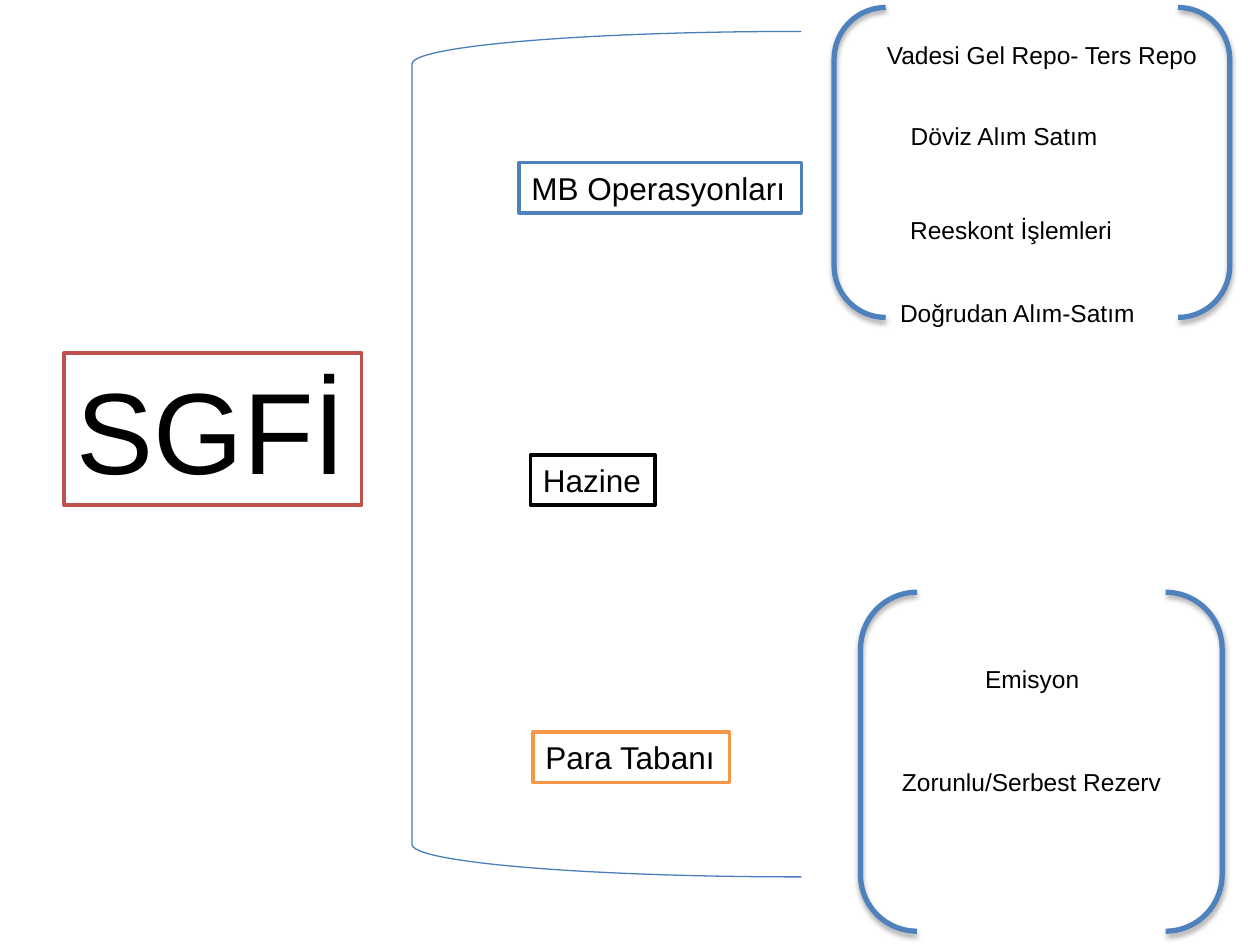
import pptx
import pptx.util
import pptx.oxml
import pptx.dml.color
from dataclasses import dataclass
from pptx.enum.shapes import MSO_SHAPE
from pptx.enum.text import MSO_ANCHOR, MSO_AUTO_SIZE, PP_ALIGN


@dataclass(frozen=True)
class Theme:
    font: str = "Arial"
    ink: str = "000000"
    paper: str = "FFFFFF"
    blue: str = "4F81BD"
    stem: str = "4B7EBC"
    red: str = "C0504D"
    orange: str = "F79646"
    root_size: int = 66
    branch_size: int = 18
    leaf_size: int = 14


THEME = Theme()
WIDTH, HEIGHT = pptx.util.Inches(10), pptx.util.Inches(7.5)

# Content: left, top, width and height are percentages of the slide
BRANCH_HEIGHT, LEAF_HEIGHT = 5.33, 4.53
NODES = [
    ("SGFİ", THEME.red, THEME.root_size, (5.1, 37.33, 23.6, 16.13)),
    ("MB Operasyonları", THEME.blue, THEME.branch_size, (41.2, 17.2, 22.4, BRANCH_HEIGHT)),
    ("Hazine", THEME.ink, THEME.branch_size, (42.1, 48.13, 9.9, BRANCH_HEIGHT)),
    ("Para Tabanı", THEME.orange, THEME.branch_size, (42.3, 77.47, 15.6, BRANCH_HEIGHT)),
]
STEM = (32.7, 3.33, 30.9, 89.47)
GROUPS = [
    {"bracket": (66.2, 0.8, 31.4, 32.8), "align": PP_ALIGN.CENTER, "leaves": [
        ("Vadesi Gel Repo- Ters Repo", 69.3, 3.6, 26.8),
        ("Döviz Alım Satım", 71.2, 12.13, 17),
        ("Reeskont İşlemleri", 71.2, 22.13, 18.1),
        ("Doğrudan Alım-Satım", 70.4, 30.93, 20.7)]},
    {"bracket": (68.3, 62.67, 28.7, 35.87), "align": PP_ALIGN.LEFT, "leaves": [
        ("Emisyon", 77.2, 69.6, 9.5),
        ("Zorunlu/Serbest Rezerv", 70.6, 80.53, 22.7)]},
]
SHADOW = (
    '<a:effectLst xmlns:a="http://schemas.openxmlformats.org/drawingml/2006/main">'
    '<a:outerShdw blurRad="39370" dist="22860" dir="5400000" rotWithShape="0">'
    '<a:srgbClr val="000000"><a:alpha val="35000"/></a:srgbClr>'
    '</a:outerShdw></a:effectLst>')


def rgb(code):
    return pptx.dml.color.RGBColor.from_string(code)


def place(area):
    return [round(share * side / 100) for share, side in zip(area, (WIDTH, HEIGHT) * 2)]


def add_outline(slide, kind, area, color, weight):
    shape = slide.shapes.add_shape(kind, *place(area))
    shape.shadow.inherit = False
    shape.fill.background()
    shape.line.color.rgb = rgb(color)
    shape.line.width = pptx.util.Pt(weight)
    return shape


def write(shape, text, size, align):
    frame = shape.text_frame
    frame.word_wrap = False
    frame.auto_size = MSO_AUTO_SIZE.SHAPE_TO_FIT_TEXT
    frame.vertical_anchor = MSO_ANCHOR.TOP
    para = frame.paragraphs[0]
    para.alignment = align
    span = para.add_run()
    span.text = text
    span.font.name = THEME.font
    span.font.size = pptx.util.Pt(size)
    span.font.color.rgb = rgb(THEME.ink)


def main():
    deck = pptx.Presentation()
    deck.slide_width, deck.slide_height = WIDTH, HEIGHT
    slide = deck.slides.add_slide(deck.slide_layouts.get_by_name("Blank"))

    # Root and branch boxes
    for text, color, size, area in NODES:
        box = add_outline(slide, MSO_SHAPE.RECTANGLE, area, color, 2)
        box.fill.solid()
        box.fill.fore_color.rgb = rgb(THEME.paper)
        write(box, text, size, PP_ALIGN.LEFT)

    # Bracket joining the branches to the root
    add_outline(slide, MSO_SHAPE.LEFT_BRACKET, STEM, THEME.stem, 0.75)

    # Bracketed groups of leaves
    for group in GROUPS:
        bracket = add_outline(slide, MSO_SHAPE.DOUBLE_BRACKET, group["bracket"], THEME.blue, 3)
        properties = bracket.element.spPr
        empty_effects = properties.find(pptx.oxml.ns.qn("a:effectLst"))
        properties.replace(empty_effects, pptx.oxml.parse_xml(SHADOW))
        for text, left, top, width in group["leaves"]:
            box = slide.shapes.add_textbox(*place((left, top, width, LEAF_HEIGHT)))
            write(box, text, THEME.leaf_size, group["align"])

    deck.save("out.pptx")


if __name__ == "__main__":
    main()
